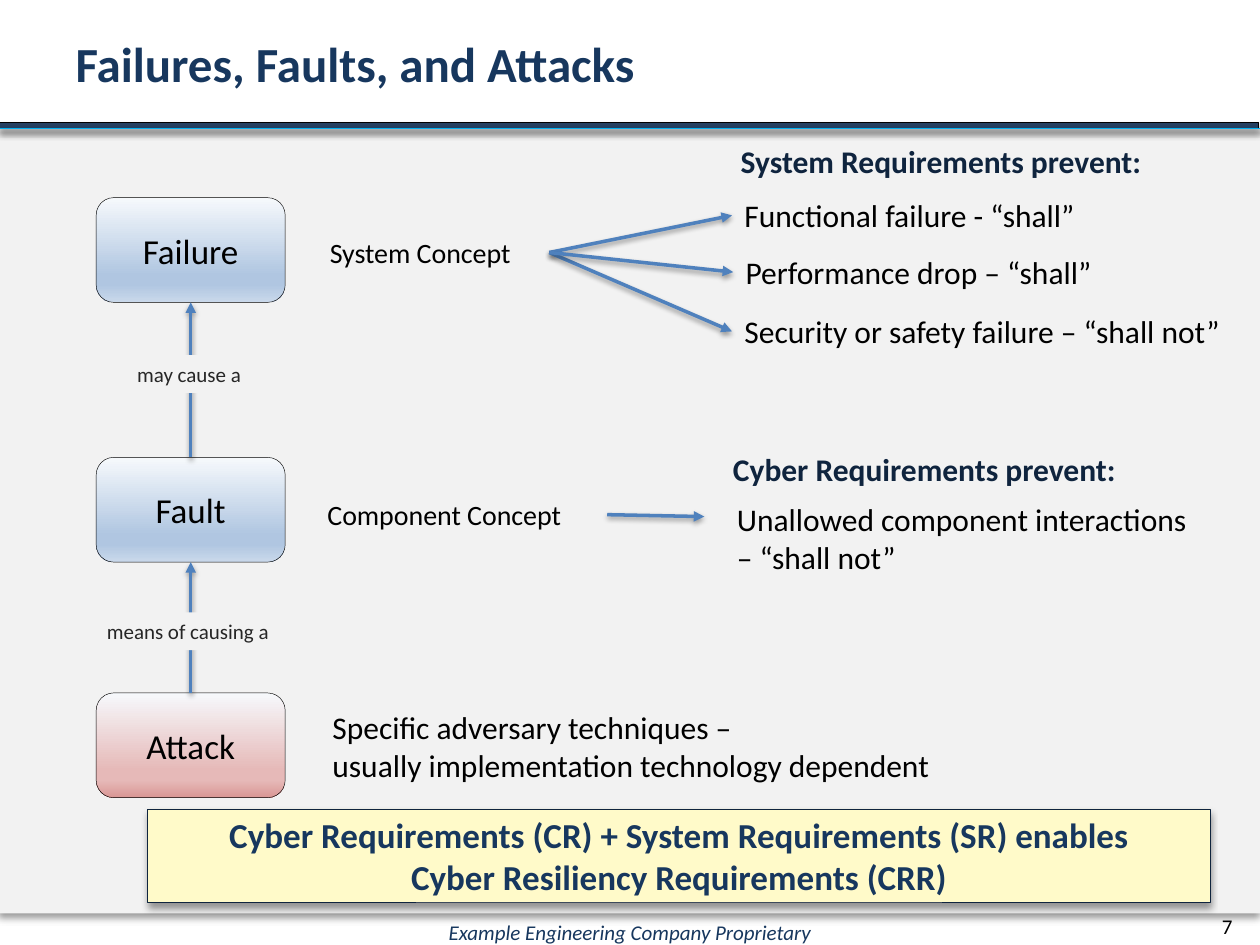
from lxml import etree
from pptx import Presentation
from pptx.dml.color import RGBColor
from pptx.enum.shapes import MSO_CONNECTOR, MSO_SHAPE
from pptx.enum.text import MSO_ANCHOR, PP_ALIGN
from pptx.oxml import parse_xml
from pptx.oxml.ns import nsdecls, qn
from pptx.util import Pt

LEFT, CENTER = PP_ALIGN.LEFT, PP_ALIGN.CENTER
TOP, MIDDLE = MSO_ANCHOR.TOP, MSO_ANCHOR.MIDDLE
RECT, ROUND = MSO_SHAPE.RECTANGLE, MSO_SHAPE.ROUNDED_RECTANGLE
LINE = MSO_CONNECTOR.STRAIGHT
NAVY, DARK, BLUE, GREY = "17375E", "0F243E", "4F81BD", "F2F2F2"
# Shadows: opacity in percent, blur and distance in points
DEEP, SOFT = (40, 4, 3), (38, 3.1, 1.6)


def write(shape, text, size=18, color="000000", bold=False, italic=False,
          align=LEFT, anchor=TOP, wrap=True):
    frame = shape.text_frame
    frame.word_wrap, frame.vertical_anchor = wrap, anchor
    frame.text = text
    for para in frame.paragraphs:
        para.alignment = align
        font = para.font
        font.name, font.size = "Calibri", Pt(size)
        font.bold, font.italic = bold, italic
        font.color.rgb = RGBColor.from_string(color)


def style(shape, fill=None, line=None, width=0.25, shadow=None, arrow=False):
    if fill:
        shape.fill.solid()
        shape.fill.fore_color.rgb = RGBColor.from_string(fill)
    if line:
        shape.line.color.rgb = RGBColor.from_string(line)
        shape.line.width = Pt(width)
    else:
        shape.line.fill.background()
    props = shape._element.spPr
    if arrow:
        etree.SubElement(props.find(qn("a:ln")), qn("a:tailEnd"), type="triangle")
    effects = etree.SubElement(props, qn("a:effectLst"))
    if shadow:
        alpha, blur, dist = shadow
        effects.append(parse_xml(
            f'<a:outerShdw {nsdecls("a")} blurRad="{Pt(blur)}" dist="{Pt(dist)}" '
            f'dir="5400000" rotWithShape="0"><a:srgbClr val="000000">'
            f'<a:alpha val="{alpha * 1000}"/></a:srgbClr></a:outerShdw>'))


deck = Presentation()
deck.slide_width, deck.slide_height = Pt(720), Pt(540)
slide = deck.slides.add_slide(deck.slide_layouts[5])
shapes = slide.shapes

# Footer and page number
foot = shapes.add_shape(RECT, 0, Pt(525.6), Pt(720), Pt(14.4))
style(foot, "FFFFFF")
write(foot, "Example Engineering Company Proprietary", size=12, color=NAVY,
      italic=True, align=CENTER)
foot.text_frame.margin_top = foot.text_frame.margin_bottom = 0
page = shapes.add_textbox(Pt(691.2), Pt(518.4), Pt(28.8), Pt(21.6))
write(page, "7", size=12, wrap=False)

# Content panel and header band
panel = shapes.add_shape(RECT, Pt(-0.7), Pt(73.4), Pt(720.7), Pt(448.6))
style(panel, GREY, shadow=DEEP)
group = shapes.add_group_shape().shapes
band = group.add_shape(RECT, Pt(-0.7), Pt(69.8), Pt(720), Pt(3.6))
style(band, "254061", "000000", shadow=DEEP)
rule = group.add_connector(LINE, Pt(-0.7), Pt(73.4), Pt(720.7), Pt(73.4))
style(rule, line="00B0F0", width=0.75, shadow=SOFT)

# Title
title = shapes.title
title.left, title.top, title.width, title.height = Pt(36), Pt(7.9), Pt(545.8), Pt(56.2)
write(title, "Failures, Faults, and Attacks", size=28, color=NAVY, bold=True,
      anchor=MIDDLE)

# Chain of boxes
cool = ("F6F9FC", "B0C6E1", "B0C6E1", "CAD9EB")
warm = ("F6F9FC", "E6B9B8", "E6B9B8", "D99694")
boxes = []
for name, top, tones in (("Failure", 113, cool), ("Fault", 261.4, cool),
                         ("Attack", 396, warm)):
    box = shapes.add_shape(ROUND, Pt(55), Pt(top), Pt(108), Pt(59.8))
    box.fill.gradient()
    box.fill.gradient_angle = 270
    stops = box._element.spPr.find(qn("a:gradFill")).find(qn("a:gsLst"))
    stops.clear()
    for place, tone in zip((0, 74, 83, 100), tones):
        stop = etree.SubElement(stops, qn("a:gs"), pos=str(place * 1000))
        etree.SubElement(stop, qn("a:srgbClr"), val=tone)
    style(box, line="000000")
    write(box, name, size=20, align=CENTER, anchor=MIDDLE)
    boxes.append(box)

# Concepts, requirements and notes
notes = {}
for key, text, left, top, width, height, form in (
    ("system", "System Concept", 181.4, 131, 132.5, 26.6, {"size": 16}),
    ("part", "Component Concept", 180, 280.8, 167, 26.6, {"size": 16}),
    ("func", "Functional failure - “shall”", 418.3, 108.7, 234.7, 28.8, {}),
    ("perf", "Performance drop – “shall”", 419, 141.1, 234.7, 28.8, {}),
    ("safe", "Security or safety failure – “shall not”", 418.3, 175, 288.7, 28.8, {}),
    ("cyber", "Unallowed component interactions – “shall not”",
     414, 282.2, 274.3, 51.1, {}),
    ("means", "Specific adversary techniques –\n"
     "usually implementation technology dependent", 182.9, 401, 360, 51.1, {}),
    ("head 1", "System Requirements prevent:", 416.2, 77.8, 252, 28.8,
     {"color": DARK, "bold": True}),
    ("head 2", "Cyber Requirements prevent:", 411.8, 253.4, 234.7, 28.8,
     {"color": DARK, "bold": True}),
):
    note = shapes.add_textbox(Pt(left), Pt(top), Pt(width), Pt(height))
    write(note, text, **form)
    notes[key] = note

# Arrows: up the chain, then from each concept to its requirements
links = [(low, 0, high, 2) for high, low in zip(boxes, boxes[1:])]
links += [(notes["system"], 3, notes[key], 1) for key in ("func", "safe", "perf")]
links.append((notes["part"], 3, None, None))
for start, out, end, into in links:
    arrow = shapes.add_connector(LINE, 0, 0, Pt(402.5), Pt(295.2))
    arrow.begin_connect(start, out)
    if end:
        arrow.end_connect(end, into)
    style(arrow, line=BLUE, width=2, shadow=SOFT, arrow=True)

# Labels over the chain arrows
for text, left, top, width in (("may cause a", 71.3, 203, 74.9),
                               ("means of causing a", 54, 349.9, 108)):
    label = shapes.add_shape(RECT, Pt(left), Pt(top), Pt(width), Pt(21.6))
    style(label, GREY)
    write(label, text, size=12, color="262626")

# Conclusion
banner = shapes.add_shape(RECT, Pt(84.2), Pt(462.2), Pt(607.7), Pt(53.3))
style(banner, "FFFAC9", DARK, shadow=DEEP)
write(banner, "Cyber Requirements (CR) + System Requirements (SR) enables\n"
      "Cyber Resiliency Requirements (CRR)", size=20, color=NAVY, bold=True,
      align=CENTER, anchor=MIDDLE)

deck.save("out.pptx")
